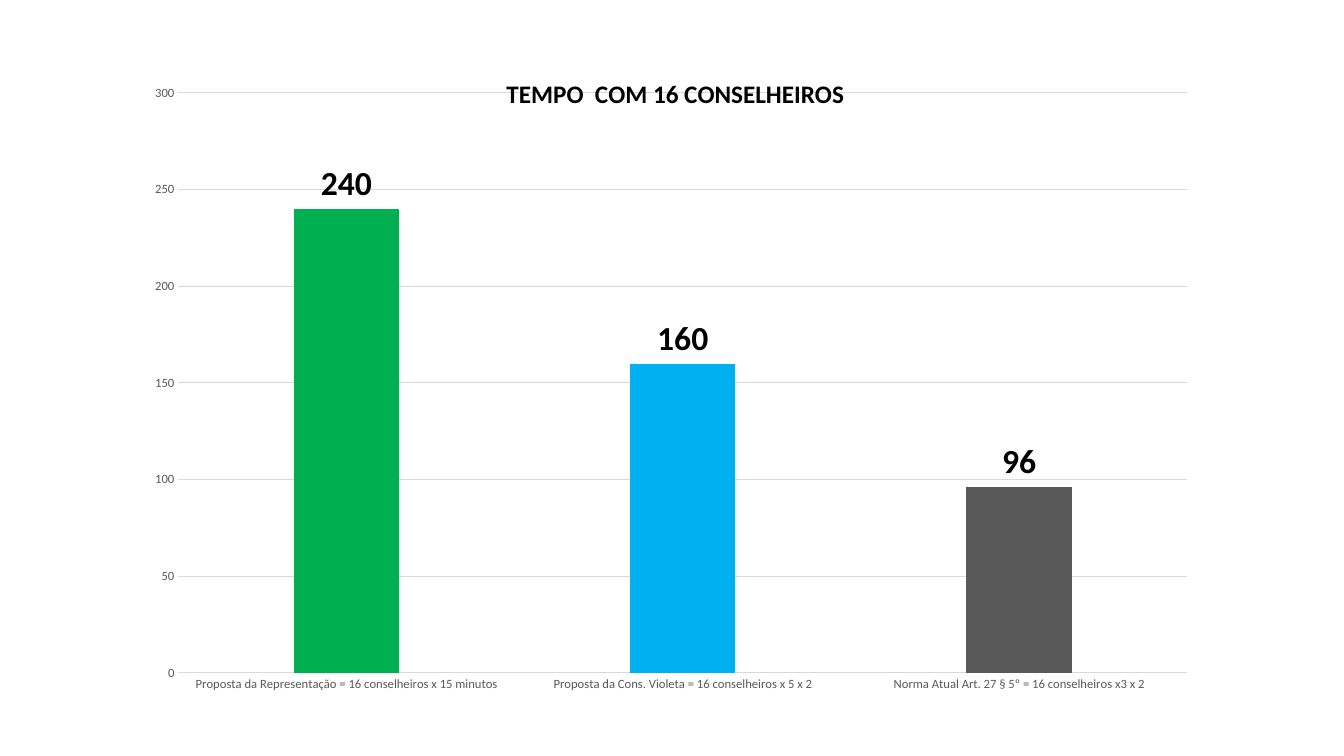
from dataclasses import dataclass

from lxml import etree
from pptx import Presentation
from pptx.chart.data import CategoryChartData
from pptx.dml.color import RGBColor
from pptx.enum.chart import XL_CHART_TYPE as ChartType
from pptx.enum.chart import XL_LABEL_POSITION as LabelPosition
from pptx.enum.chart import XL_TICK_MARK as TickMark
from pptx.oxml.ns import qn
from pptx.util import Cm, Pt

TITLE = "TEMPO  COM 16 CONSELHEIROS"
SERIES_NAME = "Series 1"
PROPOSALS = [  # category, minutes, bar colour
    ("Proposta da Representação = 16 conselheiros x 15 minutos", 240, "00B050"),
    ("Proposta da Cons. Violeta = 16 conselheiros x 5 x 2", 160, "00B0F0"),
    ("Norma Atual Art. 27 § 5º = 16 conselheiros x3 x 2", 96, "595959"),
]
SLIDE_SIZE = Cm(33.87), Cm(19.05)
CHART_BOX = Cm(3.53), Cm(1.14), Cm(26.82), Cm(16.74)
# Shares of the chart area
PLOT_LAYOUT = {"x": 0.036, "y": 0.072, "w": 0.948, "h": 0.873}
TITLE_LAYOUT = {"x": 0.34, "y": 0.04}


@dataclass(frozen=True)
class Theme:
    font: str = "Calibri"
    ink: str = "000000"
    axis_text: str = "595959"
    rule: str = "D9D9D9"
    series: str = "4472C4"
    base_size: float = 10
    axis_size: float = 9
    title_size: float = 18
    label_size: float = 24
    rule_width: float = 0.75


THEME = Theme()


def style_font(font, size, color, bold=False):
    font.name = THEME.font
    font.size = Pt(size)
    font.bold = bold
    font.color.rgb = RGBColor.from_string(color)


def style_rule(line):
    line.color.rgb = RGBColor.from_string(THEME.rule)
    line.width = Pt(THEME.rule_width)


def paint(fill, color):
    fill.solid()
    fill.fore_color.rgb = RGBColor.from_string(color)


def manual_layout(shares, inner=False):
    """Return a c:layout element placed by shares of the chart area."""
    layout = etree.Element(qn("c:layout"))
    manual = etree.SubElement(layout, qn("c:manualLayout"))
    settings = [("layoutTarget", "inner")] if inner else []
    settings += [(f"{side}Mode", "edge") for side in ("x", "y")]
    settings += [(side, str(share)) for side, share in shares.items()]
    for tag, value in settings:
        etree.SubElement(manual, qn(f"c:{tag}")).set("val", value)
    return layout


def set_title(chart):
    title = chart.chart_title
    title.text_frame.text = TITLE
    style_font(title.text_frame.paragraphs[0].runs[0].font,
               THEME.title_size, THEME.ink, bold=True)
    title.include_in_layout = False
    element = title._element
    for old in element.findall(qn("c:layout")):
        element.remove(old)
    element.find(qn("c:tx")).addnext(manual_layout(TITLE_LAYOUT))
    overlay = element.find(qn("c:overlay"))
    if overlay is None:
        overlay = etree.Element(qn("c:overlay"))
        element.find(qn("c:layout")).addnext(overlay)
    overlay.set("val", "1")


def style_axes(chart):
    for axis in (chart.category_axis, chart.value_axis):
        axis.major_tick_mark = axis.minor_tick_mark = TickMark.NONE
        style_font(axis.tick_labels.font, THEME.axis_size, THEME.axis_text)
    chart.category_axis.has_major_gridlines = False
    style_rule(chart.category_axis.format.line)
    minutes = chart.value_axis
    minutes.minimum_scale, minutes.maximum_scale, minutes.major_unit = 0, 300, 50
    minutes.format.line.fill.background()
    minutes.has_major_gridlines = True
    style_rule(minutes.major_gridlines.format.line)


def style_bars(plot):
    plot.gap_width = 219
    plot.overlap = -27
    plot.vary_by_categories = False
    bars = plot.series[0]
    paint(bars.format.fill, THEME.series)
    for index, (_, _, color) in enumerate(PROPOSALS):
        paint(bars.points[index].format.fill, color)
    labels = bars.data_labels
    labels.show_value = True
    labels.position = LabelPosition.OUTSIDE_END
    style_font(labels.font, THEME.label_size, THEME.ink, bold=True)


def add_time_chart(slide):
    data = CategoryChartData()
    data.categories = [category for category, _, _ in PROPOSALS]
    data.add_series(SERIES_NAME, [minutes for _, minutes, _ in PROPOSALS])
    chart = slide.shapes.add_chart(
        ChartType.COLUMN_CLUSTERED, *CHART_BOX, data).chart
    chart.has_legend = False
    style_font(chart.font, THEME.base_size, THEME.ink)
    set_title(chart)
    style_axes(chart)
    style_bars(chart.plots[0])
    plot_area = chart._chartSpace.chart.plotArea
    for old in plot_area.findall(qn("c:layout")):
        plot_area.remove(old)
    plot_area.insert(0, manual_layout(PLOT_LAYOUT, inner=True))


def main():
    deck = Presentation()
    deck.slide_width, deck.slide_height = SLIDE_SIZE
    add_time_chart(deck.slides.add_slide(deck.slide_layouts[6]))
    deck.save("out.pptx")


if __name__ == "__main__":
    main()
